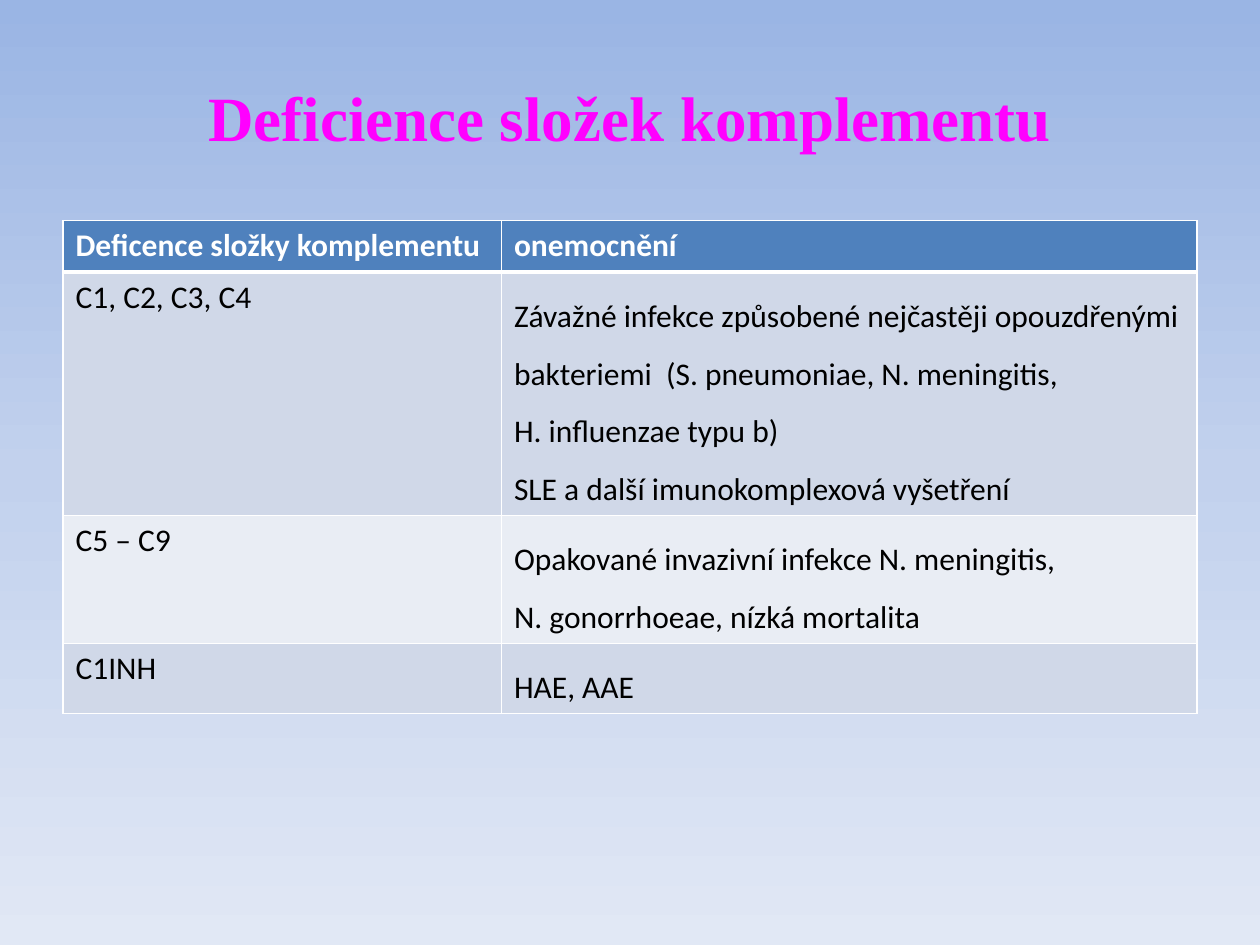
from copy import deepcopy

from lxml import etree
from pptx import Presentation
from pptx.dml.color import RGBColor
from pptx.enum import text
from pptx.oxml.ns import qn
from pptx.util import Inches, Pt

COLORS = {
    "title": "FF00FF",
    "header": "4F81BD",
    "odd_row": "D0D8E8",
    "even_row": "E9EDF4",
    "white": "FFFFFF",
    "black": "000000",
}
BACKGROUND_STOPS = [(0, "9AB5E4"), (0.5, "C2D1ED"), (1, "E1E8F5")]

# "\n" starts a paragraph, "\v" breaks a line within one.
DEFICIENCIES = [
    ("Deficence složky komplementu", "onemocnění"),
    ("C1, C2, C3, C4",
     "Závažné infekce způsobené nejčastěji opouzdřenými bakteriemi  "
     "(S. pneumoniae, N. meningitis, \vH. influenzae typu b)\n"
     "SLE a další imunokomplexová vyšetření"),
    ("C5 – C9",
     "Opakované invazivní infekce N. meningitis, \v"
     "N. gonorrhoeae, nízká mortalita"),
    ("C1INH", "HAE, AAE"),
]


def rgb(name):
    return RGBColor.from_string(COLORS[name])


def set_font(paragraph, name, size, color, bold):
    font = paragraph.font
    font.name, font.size, font.bold = name, Pt(size), bold
    font.color.rgb = rgb(color)


def paint_background(slide):
    fill = slide.background.fill
    fill.gradient()
    fill.gradient_angle = 270
    stop_list = slide.element.find(".//" + qn("a:gsLst"))
    stop_list.append(deepcopy(stop_list[-1]))
    for stop, (position, color) in zip(fill.gradient_stops, BACKGROUND_STOPS):
        stop.position = position
        stop.color.rgb = RGBColor.from_string(color)


def add_title(slide, wording):
    title = slide.shapes.title
    title.left, title.top = Inches(0.5), Inches(0.3)
    title.width, title.height = Inches(9), Inches(1.25)
    frame = title.text_frame
    frame.text = wording
    frame.vertical_anchor = text.MSO_ANCHOR.MIDDLE
    heading = frame.paragraphs[0]
    heading.alignment = text.PP_ALIGN.CENTER
    set_font(heading, "Times New Roman", 36, "title", True)


def set_borders(cell, bottom_width):
    """Draw white cell borders; they must precede the fill in the XML."""
    properties = cell._tc.get_or_add_tcPr()
    widths = {"lnL": 1, "lnR": 1, "lnT": 1, "lnB": bottom_width}
    for index, (side, width) in enumerate(widths.items()):
        line = etree.Element(qn("a:" + side), w=str(Pt(width)))
        solid = etree.SubElement(line, qn("a:solidFill"))
        etree.SubElement(solid, qn("a:srgbClr"), val=COLORS["white"])
        properties.insert(index, line)


def fill_cell(cell, wording, fill, is_header, line_spacing):
    cell.text_frame.text = wording
    cell.fill.solid()
    cell.fill.fore_color.rgb = rgb(fill)
    set_borders(cell, 3 if is_header else 1)
    for paragraph in cell.text_frame.paragraphs:
        set_font(paragraph, "Calibri", 18,
                 "white" if is_header else "black", is_header)
        if line_spacing:
            paragraph.line_spacing = line_spacing


def add_deficiency_table(slide):
    frame = slide.shapes.add_table(
        len(DEFICIENCIES), 2, Inches(0.5), Inches(1.75), Inches(9), Inches(3.72))
    table = frame.table
    for column, width in zip(table.columns, (3.48, 5.52)):
        column.width = Inches(width)
    for row_index, wordings in enumerate(DEFICIENCIES):
        is_header = row_index == 0
        table.rows[row_index].height = Inches(0.41)
        fill = "header" if is_header else ("even_row", "odd_row")[row_index % 2]
        for column_index, wording in enumerate(wordings):
            is_disease = column_index == 1 and not is_header
            fill_cell(table.cell(row_index, column_index), wording, fill,
                      is_header, 1.5 if is_disease else None)
    frame.height = Inches(3.72)


def main():
    presentation = Presentation()
    presentation.slide_width, presentation.slide_height = Inches(10), Inches(7.5)
    slide = presentation.slides.add_slide(presentation.slide_layouts[5])
    paint_background(slide)
    add_title(slide, "Deficience složek komplementu")
    add_deficiency_table(slide)
    presentation.save("out.pptx")


if __name__ == "__main__":
    main()
